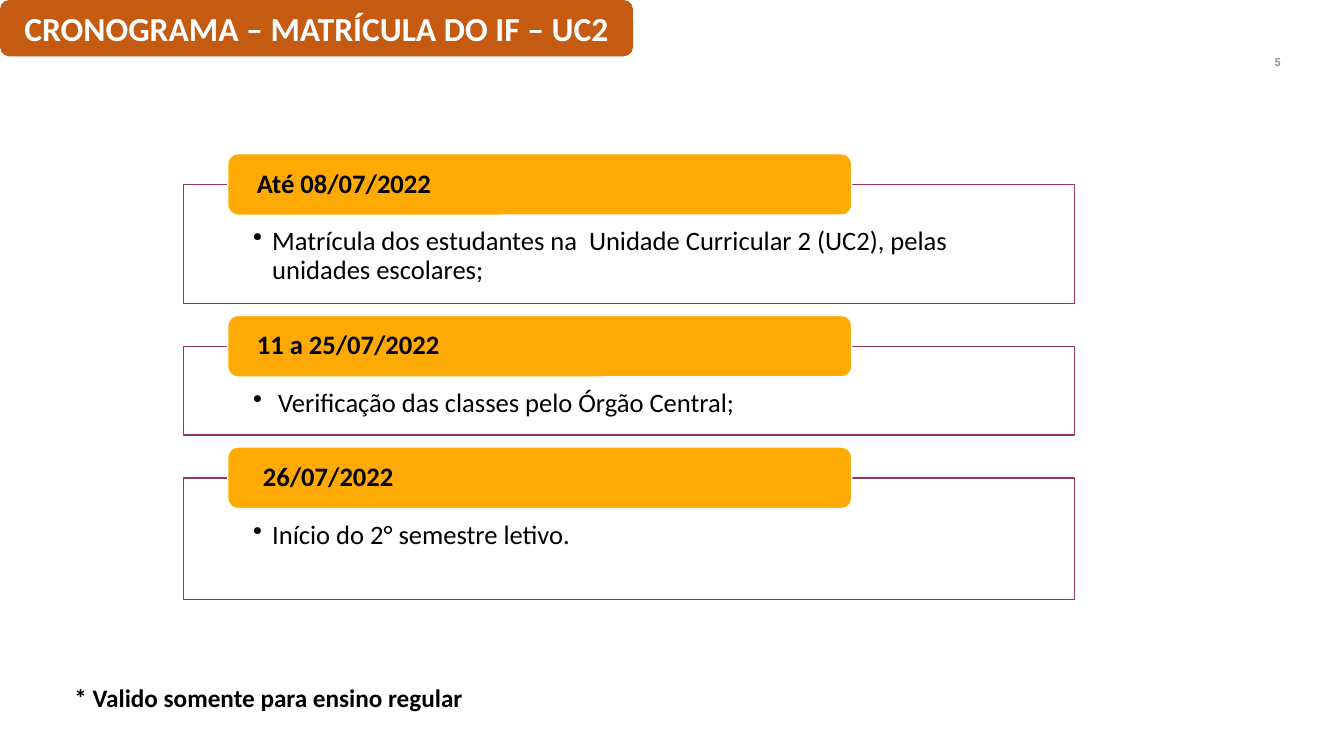
import pptx
import pptx.util
import pptx.dml.color
import pptx.enum.shapes
import pptx.enum.text
import pptx.oxml
import pptx.oxml.ns

Inches = pptx.util.Inches
Shape = pptx.enum.shapes.MSO_SHAPE
Align = pptx.enum.text.PP_ALIGN
Anchor = pptx.enum.text.MSO_ANCHOR
Fit = pptx.enum.text.MSO_AUTO_SIZE

COLORS = {
    "title": "C55A11", "tab": "FEAA02", "border": "993366",
    "white": "FFFFFF", "text": "000000", "number": "929292",
}

deck = pptx.Presentation()
deck.slide_width = Inches(13.333)
deck.slide_height = Inches(7.5)
page = deck.slides.add_slide(deck.slide_layouts[6])
column = deck.slide_width / 40
row = deck.slide_height / 30


def add_box(grid, kind=None, fill=None, line=None):
    left, top, width, height = grid
    area = [int(left * column), int(top * row), int(width * column), int(height * row)]
    if kind is None:
        return page.shapes.add_textbox(*area)
    box = page.shapes.add_shape(kind, *area)
    box.shadow.inherit = False
    if fill:
        box.fill.solid()
        box.fill.fore_color.rgb = pptx.dml.color.RGBColor.from_string(COLORS[fill])
    else:
        box.fill.background()
    if line:
        box.line.color.rgb = pptx.dml.color.RGBColor.from_string(COLORS[line])
        box.line.width = pptx.util.Pt(1)
    else:
        box.line.fill.background()
    return box


def add_text(box, text, size, color="text", bold=True, align=Align.LEFT,
             anchor=Anchor.MIDDLE, insets=None, fit=Fit.NONE):
    frame = box.text_frame
    frame.word_wrap = True
    frame.auto_size = fit
    frame.vertical_anchor = anchor
    if insets:
        side, top, bottom = insets
        frame.margin_left = frame.margin_right = int(side * column)
        frame.margin_top = int(top * row)
        frame.margin_bottom = int(bottom * row)
    para = frame.paragraphs[0]
    para.alignment = align
    span = para.add_run()
    span.text = text
    span.font.name = "Roboto" if color == "number" else "Calibri"
    span.font.size = pptx.util.Pt(size)
    span.font.bold = bold
    span.font.color.rgb = pptx.dml.color.RGBColor.from_string(COLORS[color])
    return para


number = add_box((37.56, 2.2, 0.93, 0.52))
add_text(number, "5", 8, "number", align=Align.CENTER, insets=(0, 0, 0))

title = add_box((0, 0, 18.84, 2.24), Shape.ROUNDED_RECTANGLE, "title")
add_text(title, "CRONOGRAMA – MATRÍCULA DO IF – UC2", 24, "white",
         align=Align.CENTER, fit=Fit.SHAPE_TO_FIT_TEXT)

stages = [
    ("Até 08/07/2022",
     "Matrícula dos estudantes na  Unidade Curricular 2 (UC2), pelas unidades escolares;", 4.72),
    ("11 a 25/07/2022", " Verificação das classes pelo Órgão Central;", 3.52),
    (" 26/07/2022", "Início do 2° semestre letivo.", 4.84),
]
stage_gap = 1.7
tab_height = 2.44
indent = Inches(0.19)
top = 7.32

for date, task, height in stages:
    panel = add_box((5.46, top, 26.52, height), Shape.RECTANGLE, line="border")
    para = add_text(panel, task, 19, bold=False, anchor=Anchor.TOP, insets=(2.07, 1.72, 0.6))
    para.line_spacing = 0.9
    properties = para._p.get_or_add_pPr()
    properties.set("marL", str(indent))
    properties.set("indent", str(-indent))
    bullet = pptx.oxml.parse_xml(
        f'<a:buChar {pptx.oxml.ns.nsdecls("a")} char="•"/>')
    properties.append(bullet)

    tab = add_box((6.78, top - tab_height / 2, 18.57, tab_height),
                  Shape.ROUNDED_RECTANGLE, "tab", "white")
    add_text(tab, date, 19, insets=(0.78, 0, 0)).line_spacing = 0.9
    top += height + stage_gap

footnote = add_box((1.92, 26.88, 18.84, 1.6))
add_text(footnote, "* Valido somente para ensino regular", 18,
         anchor=Anchor.TOP, fit=Fit.SHAPE_TO_FIT_TEXT)

deck.save("out.pptx")
